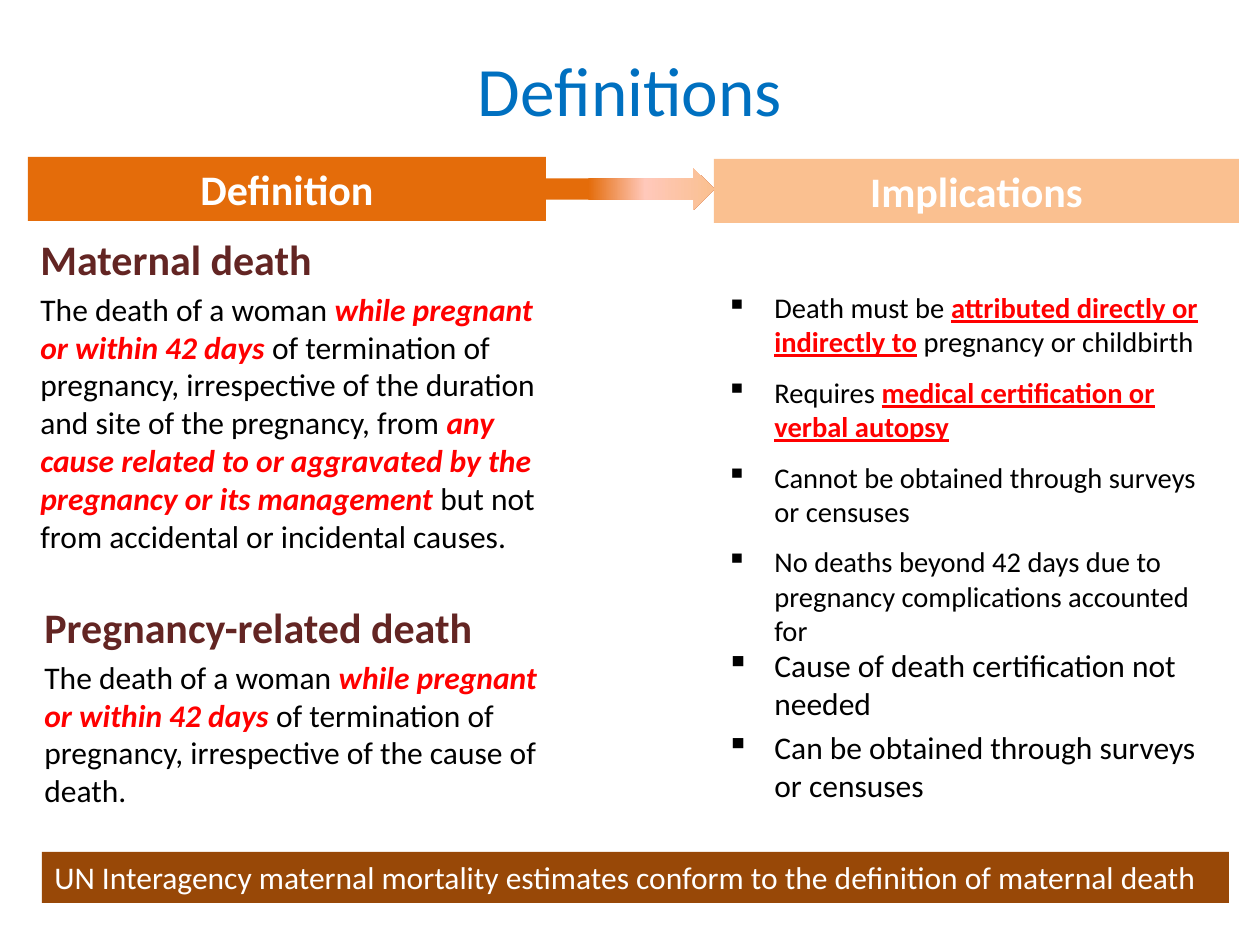
"""Build the slide that sets definitions of maternal death beside their implications."""
from lxml.etree import SubElement
from pptx import Presentation
from pptx.dml.color import RGBColor
from pptx.enum.shapes import MSO_SHAPE
from pptx.enum.text import MSO_ANCHOR, PP_ALIGN
from pptx.oxml.ns import qn
from pptx.util import Emu, Pt

SCALE = 914400 / 126
BLUE = RGBColor(0x00, 0x70, 0xC0)
MAROON = RGBColor(0x63, 0x25, 0x23)
BLACK = RGBColor(0x00, 0x00, 0x00)
WHITE = RGBColor(0xFF, 0xFF, 0xFF)
RED = RGBColor(0xFF, 0x00, 0x00)
ORANGE = RGBColor(0xE4, 0x6C, 0x0A)
PEACH = RGBColor(0xFA, 0xC0, 0x90)
PINK = RGBColor(0xFF, 0xC8, 0xBA)
BROWN = RGBColor(0x98, 0x48, 0x07)


def px(*lengths):
    return [Emu(round(length * SCALE)) for length in lengths]


def write(paragraph, text, size=18, color=BLACK, bold=False, emphasis="italic",
          align=PP_ALIGN.LEFT, before=0, after=0, bullet=None):
    """Write text into the paragraph; parts between asterisks are bold red."""
    paragraph.alignment = align
    paragraph.space_before = Pt(before)
    paragraph.space_after = Pt(after)
    if bullet:
        properties = paragraph._p.get_or_add_pPr()
        indent = px(48)[0]
        properties.set("marL", str(indent))
        properties.set("indent", str(-indent))
        SubElement(properties, qn("a:buChar"), char=bullet)
    for index, part in enumerate(text.split("*")):
        if not part:
            continue
        stressed = index % 2 == 1
        run = paragraph.add_run()
        run.text = part
        font = run.font
        font.name = "Calibri"
        font.size = Pt(size)
        font.color.rgb = RED if stressed else color
        font.bold = bold or stressed
        font.italic = stressed and emphasis == "italic"
        font.underline = stressed and emphasis == "underline"


presentation = Presentation()
presentation.slide_width, presentation.slide_height = px(1260, 945)
slide = presentation.slides.add_slide(presentation.slide_layouts[6])

title = slide.shapes.add_textbox(*px(63, 38, 1134, 101)).text_frame
title.word_wrap = True
title.vertical_anchor = MSO_ANCHOR.MIDDLE
write(title.paragraphs[0], "Definitions", size=39.6, color=BLUE, align=PP_ALIGN.CENTER)

definitions = [
    ((28, 227, 549, 350), "Maternal death",
     "The death of a woman *while pregnant or within 42 days* of termination of "
     "pregnancy, irrespective of the duration and site of the pregnancy, from *any "
     "cause related to or aggravated by the pregnancy or its management *but not "
     "from accidental or incidental causes."),
    ((32, 595, 549, 224), "Pregnancy-related death",
     "The death of a woman *while pregnant or within 42 days* of termination of "
     "pregnancy, irrespective of the cause of death."),
]
for box, heading, definition in definitions:
    frame = slide.shapes.add_textbox(*px(*box)).text_frame
    frame.word_wrap = True
    write(frame.paragraphs[0], heading, size=24, color=MAROON, bold=True, before=4.8)
    write(frame.add_paragraph(), definition, before=3.6)

implications = [
    ((714, 284, 525, 305), 16.3, 6, [
        "Death must be *attributed directly or indirectly to* pregnancy or childbirth",
        "Requires *medical certification or verbal autopsy*",
        "Cannot be obtained through surveys or censuses",
        "No deaths beyond 42 days due to pregnancy complications accounted for"]),
    ((714, 640, 525, 179), 18, 0, [
        "Cause of death certification not needed",
        "Can be obtained through surveys or censuses"]),
]
for box, size, after, items in implications:
    frame = slide.shapes.add_textbox(*px(*box)).text_frame
    frame.word_wrap = True
    for index, item in enumerate(items):
        paragraph = frame.add_paragraph() if index else frame.paragraphs[0]
        write(paragraph, item, size=size, emphasis="underline",
              before=round(size * 0.2, 1), after=after, bullet="▪")

banners = [
    ((28, 157, 518, 64), ORANGE, "Definition", 24, True, PP_ALIGN.CENTER),
    ((714, 159, 525, 64), PEACH, "Implications", 24, True, PP_ALIGN.CENTER),
    ((42, 852, 1187, 51), BROWN,
     "UN Interagency maternal mortality estimates conform to the definition of "
     "maternal death", 18, False, PP_ALIGN.LEFT),
]
for box, fill, text, size, bold, align in banners:
    banner = slide.shapes.add_shape(MSO_SHAPE.RECTANGLE, *px(*box))
    banner.shadow.inherit = False
    banner.fill.solid()
    banner.fill.fore_color.rgb = fill
    banner.line.fill.background()
    banner.text_frame.word_wrap = True
    banner.text_frame.vertical_anchor = MSO_ANCHOR.TOP
    write(banner.text_frame.paragraphs[0], text, size=size, color=WHITE, bold=bold, align=align)

arrow = slide.shapes.add_shape(MSO_SHAPE.RIGHT_ARROW, *px(546, 168, 168, 42))
arrow.shadow.inherit = False
arrow.line.fill.background()
arrow.fill.gradient()
arrow.fill.gradient_angle = 0
stops = arrow._element.spPr.find(qn("a:gradFill")).find(qn("a:gsLst"))
for stop in list(stops):
    stops.remove(stop)
for percent, color in [(0, ORANGE), (25, ORANGE), (59, PINK), (100, PEACH)]:
    stop = SubElement(stops, qn("a:gs"), pos=str(percent * 1000))
    SubElement(stop, qn("a:srgbClr"), val=str(color))

presentation.save("out.pptx")
